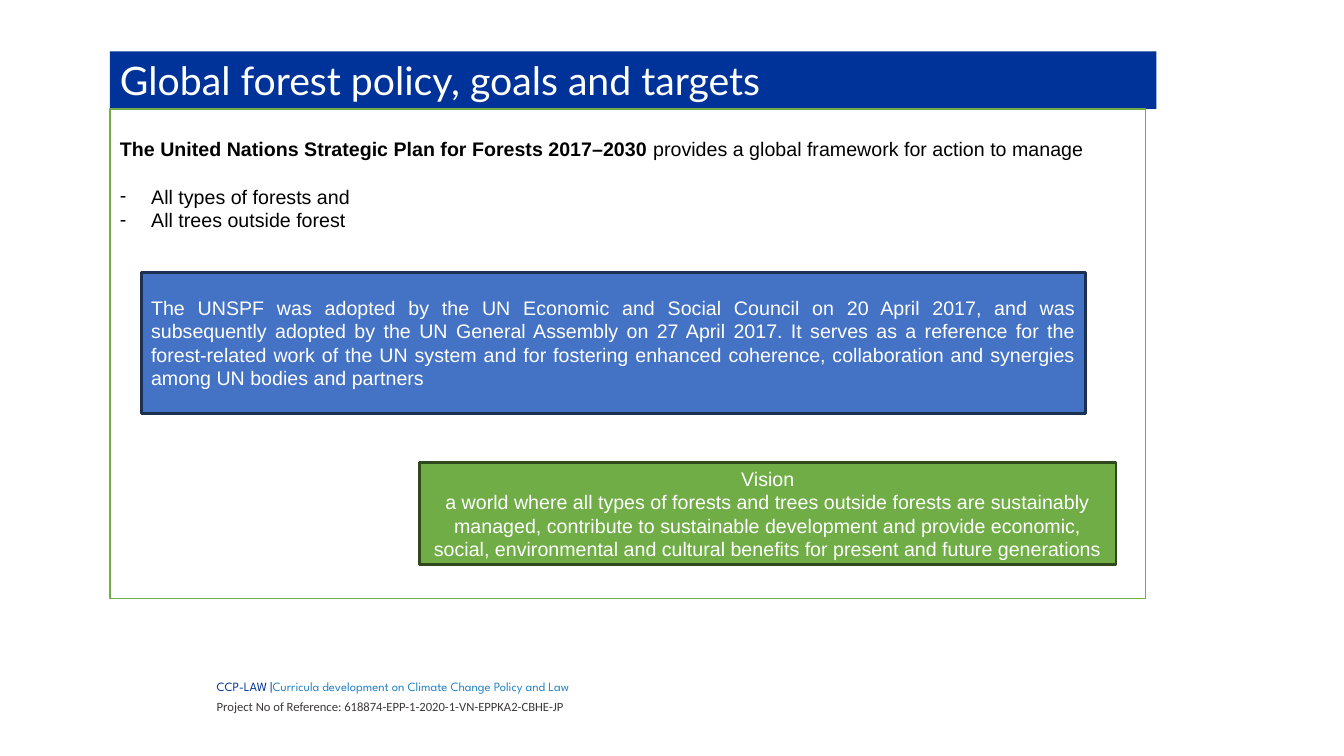
from lxml.etree import SubElement
from pptx import Presentation
from pptx.dml.color import RGBColor
from pptx.enum.shapes import MSO_SHAPE
from pptx.enum.text import MSO_ANCHOR, MSO_AUTO_SIZE, PP_ALIGN
from pptx.oxml.ns import qn
from pptx.util import Inches, Pt

COLORS = {
    "navy": "003399", "sky": "2683C6", "charcoal": "3B3838",
    "white": "FFFFFF", "black": "000000",
    "blue": "4472C4", "blue_edge": "1C3052",
    "green": "70AD47", "green_edge": "2F491D",
}


def color(name):
    return RGBColor.from_string(COLORS[name])


def place(shape, left, top, width, height):
    shape.left, shape.top = Inches(left), Inches(top)
    shape.width, shape.height = Inches(width), Inches(height)


def paint(shape, fill, line=None, line_width=1):
    shape.fill.solid()
    shape.fill.fore_color.rgb = color(fill)
    if line:
        shape.line.color.rgb = color(line)
        shape.line.width = Pt(line_width)
    else:
        shape.line.fill.background()


def set_frame(text_frame, anchor, top=0.05):
    text_frame.word_wrap = True
    text_frame.auto_size = MSO_AUTO_SIZE.NONE
    text_frame.vertical_anchor = anchor
    text_frame.margin_left = text_frame.margin_right = Inches(0.1)
    text_frame.margin_top, text_frame.margin_bottom = Inches(top), Inches(0.05)


def set_bullet(paragraph, character=None):
    """Give the paragraph a hanging bullet, or none."""
    properties = paragraph._p.get_or_add_pPr()
    indent = Inches(0.31) if character else 0
    properties.set("marL", str(indent))
    properties.set("indent", str(-indent))
    if character:
        SubElement(properties, qn("a:buChar")).set("char", character)
    else:
        SubElement(properties, qn("a:buNone"))


def write_runs(paragraph, texts, size, font, colors, bolds=(False, False)):
    for text, color_name, bold in zip(texts, colors, bolds):
        run = paragraph.add_run()
        run.text = text
        run.font.size, run.font.name, run.font.bold = Pt(size), font, bold
        run.font.color.rgb = color(color_name)


def add_title(slide, text):
    title = slide.shapes.title
    place(title, 1.09, 0.51, 10.38, 0.57)
    paint(title, "navy")
    set_frame(title.text_frame, MSO_ANCHOR.TOP)
    paragraph = title.text_frame.paragraphs[0]
    paragraph.alignment = PP_ALIGN.LEFT
    write_runs(paragraph, [text], 28, "Lato", ["white"])


def add_body(slide, lead, bullets):
    body = slide.placeholders[1]
    place(body, 1.09, 1.08, 10.27, 4.86)
    paint(body, "white", "green")
    set_frame(body.text_frame, MSO_ANCHOR.TOP, top=0.28)
    paragraph = body.text_frame.paragraphs[0]
    paragraph.space_before = Pt(0)
    set_bullet(paragraph)
    write_runs(paragraph, lead, 14, "Arial", ["black", "black"], (True, False))
    for index, text in enumerate(bullets):
        paragraph = body.text_frame.add_paragraph()
        paragraph.space_before = Pt(0 if index else 17)
        set_bullet(paragraph, "-")
        write_runs(paragraph, [text], 14, "Arial", ["black"])


def add_callout(slide, box, fill, line, texts, alignment):
    shape = slide.shapes.add_shape(MSO_SHAPE.RECTANGLE, *map(Inches, box))
    shape.shadow.inherit = False
    paint(shape, fill, line, 2)
    set_frame(shape.text_frame, MSO_ANCHOR.MIDDLE)
    shape.text_frame.text = "\n".join(texts)
    for paragraph in shape.text_frame.paragraphs:
        paragraph.alignment = alignment
        font = paragraph.runs[0].font
        font.size, font.name = Pt(14), "Arial"
        font.color.rgb = color("white")


def add_project_table(slide):
    frame = slide.shapes.add_table(
        1, 2, Inches(1.3), Inches(6.67), Inches(4.52), Inches(0.52))
    table = frame.table
    table.first_row = table.horz_banding = False
    for column, width in zip(table.columns, (0.78, 3.74)):
        column.width = Inches(width)
    for cell in table.rows[0].cells:
        cell.fill.background()
        cell.vertical_anchor = MSO_ANCHOR.MIDDLE
        cell.margin_left = cell.margin_right = Inches(0.07)
        cell.margin_top = cell.margin_bottom = 0
    text_frame = table.cell(0, 1).text_frame
    name, reference = text_frame.paragraphs[0], text_frame.add_paragraph()
    name.line_spacing = reference.line_spacing = 1.07
    reference.space_before = Pt(3)
    write_runs(
        name,
        ["CCP-LAW |", "Curricula development on Climate Change Policy and Law"],
        9, "League Spartan", ["navy", "sky"])
    write_runs(
        reference,
        ["Project No of Reference: 618874-EPP-1-2020-1-VN-EPPKA2-CBHE-JP"],
        9, "Calibri", ["charcoal"])


def main():
    presentation = Presentation()
    presentation.slide_width = Inches(13.33)
    presentation.slide_height = Inches(7.5)
    slide = presentation.slides.add_slide(presentation.slide_layouts[1])

    # Heading and framed text
    add_title(slide, "Global forest policy, goals and targets")
    add_body(
        slide,
        ["The United Nations Strategic Plan for Forests 2017–2030 ",
         "provides a global framework for action to manage"],
        ["All types of forests and", "All trees outside forest"])

    # Adoption and vision callouts
    add_callout(
        slide, (1.4, 2.7, 9.37, 1.4), "blue", "blue_edge",
        ["The UNSPF was adopted by the UN Economic and Social Council on "
         "20 April 2017, and was subsequently adopted by the UN General "
         "Assembly on 27 April 2017. It serves as a reference for the "
         "forest-related work of the UN system and for fostering enhanced "
         "coherence, collaboration and synergies among UN bodies and partners"],
        PP_ALIGN.JUSTIFY)
    add_callout(
        slide, (4.16, 4.59, 6.91, 1.01), "green", "green_edge",
        ["Vision",
         "a world where all types of forests and trees outside forests are "
         "sustainably managed, contribute to sustainable development and "
         "provide economic, social, environmental and cultural benefits for "
         "present and future generations"],
        PP_ALIGN.CENTER)

    # Project reference
    add_project_table(slide)
    presentation.save("out.pptx")


if __name__ == "__main__":
    main()
